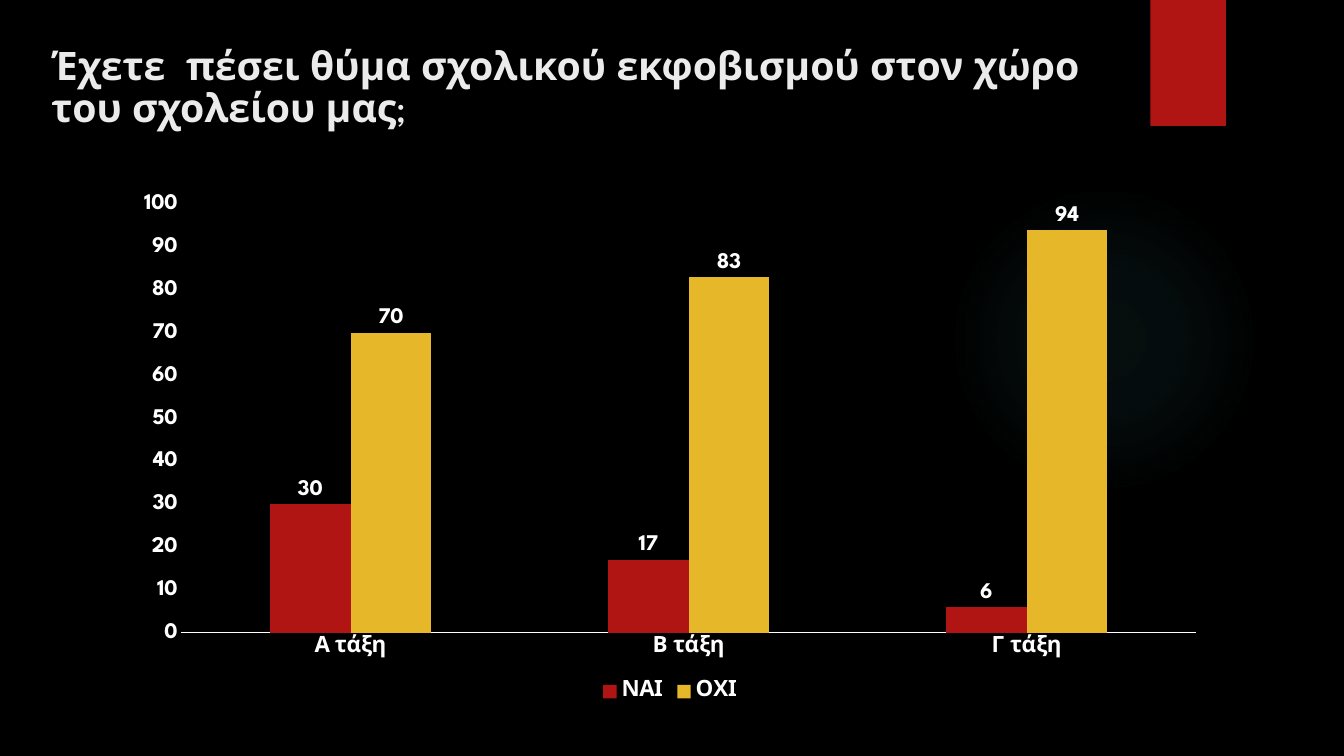
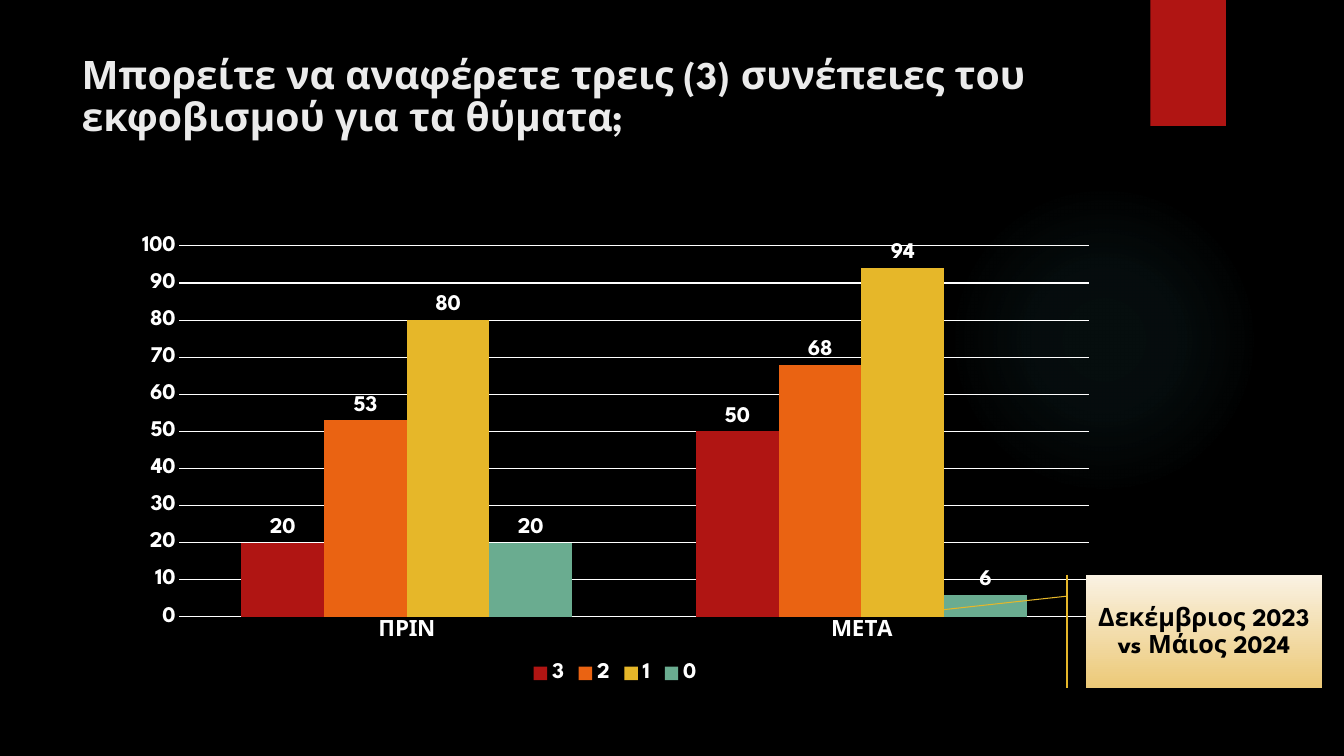
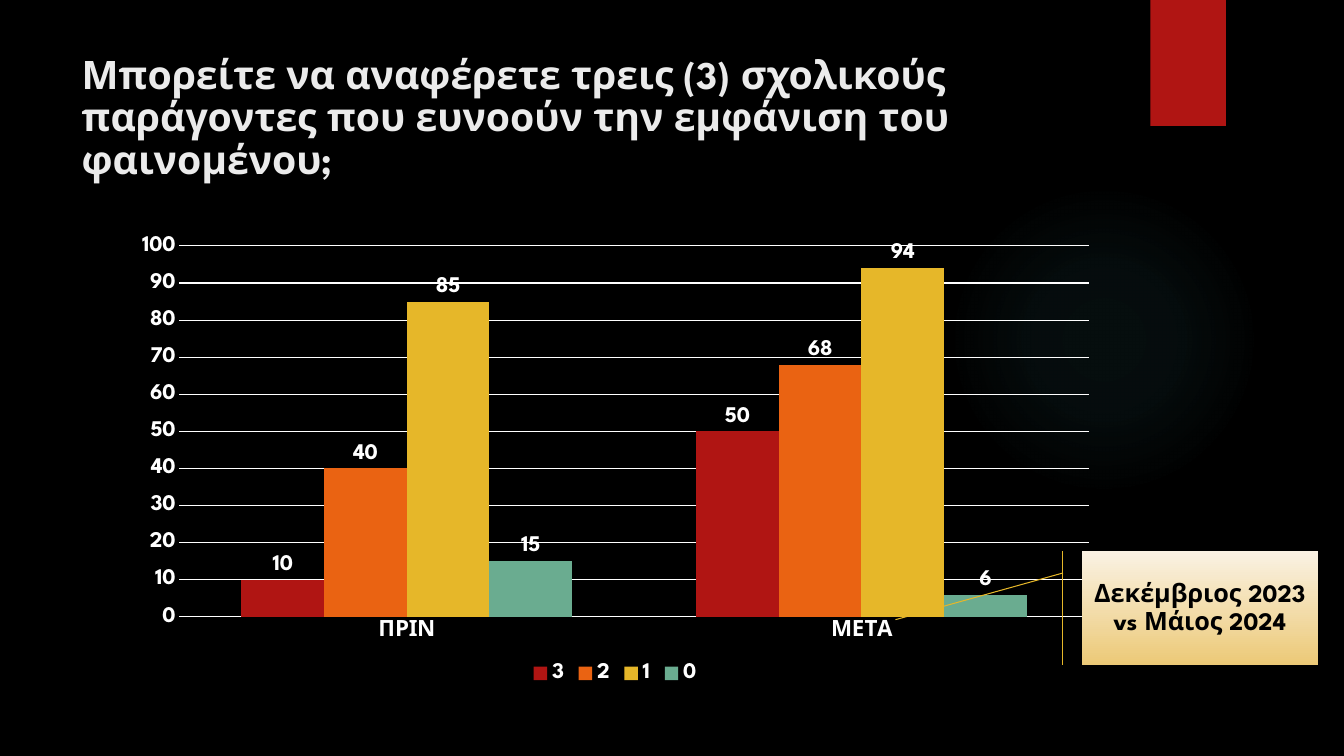
from dataclasses import dataclass

import pptx
import pptx.chart.data
import pptx.dml.color
import pptx.enum.chart
import pptx.enum.shapes
import pptx.enum.text
import pptx.oxml
import pptx.oxml.ns
import pptx.util

Inches = pptx.util.Inches
Pt = pptx.util.Pt
qn = pptx.oxml.ns.qn


@dataclass(frozen=True)
class Theme:
    font: str = "League Spartan"
    background: str = "000000"
    title: str = "EBEBEB"
    chart_text: str = "FFFFFF"
    callout_text: str = "000000"
    red: str = "B01513"
    orange: str = "EA6312"
    gold: str = "E6B729"
    green: str = "6AAC90"
    glow: str = "50B9C1"
    callout_top: str = "FAF2E3"
    callout_bottom: str = "ECC977"
    title_size: int = 28
    callout_size: int = 18
    chart_size: int = 16
    hairline: float = 0.75
    line_spacing: float = 0.9


THEME = Theme()

GLOW_BOX = (9.41, 1.83, 3.08, 3.08)
RIBBON_BOX = (11.41, 0, 0.75, 1.25)
CALLOUT_SIZE = (2.34, 1.13)
PERIODS = "Δεκέμβριος 2023 vs Μάιος 2024"

CLASS_CHART = dict(box=(1.21, 1.84, 10.87, 5.17), plot=(1.8, 2.03, 10.06, 4.25),
                   gap=219, grid=False, colors=(THEME.red, THEME.gold))
BEFORE_AFTER_CHART = dict(box=(1.21, 2.24, 9.78, 4.59), plot=(1.78, 2.44, 9.02, 3.68),
                          gap=150, grid=True,
                          colors=(THEME.red, THEME.orange, THEME.gold, THEME.green))

# Title runs are (text, bold) pairs.
SLIDES = [
    dict(title=[("Έχετε  πέσει θύμα σχολικού εκφοβισμού στον χώρο του σχολείου μας", True),
                (";", False)],
         title_box=(0.41, 0.41, 10.87, 1.53),
         chart=CLASS_CHART,
         categories=("Α τάξη", "Β τάξη", "Γ τάξη"),
         series={"ΝΑΙ": (30, 17, 6), "ΟΧΙ": (70, 83, 94)}),
    dict(title=[("Μπορείτε να αναφέρετε τρεις (3) συνέπειες του εκφοβισμού "
                 "για τα θύματα;", True)],
         title_box=(0.71, 0.5, 10.61, 1.53),
         chart=BEFORE_AFTER_CHART,
         categories=("ΠΡΙΝ", "ΜΕΤΑ"),
         series={"3": (20, 50), "2": (53, 68), "1": (80, 94), "0": (20, 6)},
         callout=dict(at=(10.77, 5.7), pointer=(0.19, -0.08, 0.36, -0.83))),
    dict(title=[("Μπορείτε να αναφέρετε τρεις (3) σχολικούς παράγοντες που ευνοούν "
                 "την εμφάνιση του φαινομένου;", True)],
         title_box=(0.71, 0.5, 10.29, 1.53),
         chart=BEFORE_AFTER_CHART,
         categories=("ΠΡΙΝ", "ΜΕΤΑ"),
         series={"3": (10, 50), "2": (40, 68), "1": (85, 94), "0": (15, 6)},
         callout=dict(at=(10.73, 5.47), pointer=(0.19, -0.08, 0.6, -0.79))),
]


def rgb(value):
    return pptx.dml.color.RGBColor.from_string(value)


def inches(box):
    return [Inches(length) for length in box]


def set_font(font, size, color, bold=True):
    font.name = THEME.font
    font.size = Pt(size)
    font.bold = bold
    font.color.rgb = rgb(color)


def write(frame, runs, size, color, align, anchor):
    frame.word_wrap = True
    frame.auto_size = pptx.enum.text.MSO_AUTO_SIZE.NONE
    frame.vertical_anchor = anchor
    paragraph = frame.paragraphs[0]
    paragraph.alignment = align
    paragraph.line_spacing = THEME.line_spacing
    for text, bold in runs:
        run = paragraph.add_run()
        run.text = text
        set_font(run.font, size, color, bold)


def fill_gradient(shape, stops, direction):
    """Fill with (position %, colour, opacity %) stops along a direction element."""
    stop_xml = "".join(
        f'<a:gs pos="{position * 1000}"><a:srgbClr val="{color}">'
        f'<a:alpha val="{opacity * 1000}"/></a:srgbClr></a:gs>'
        for position, color, opacity in stops)
    gradient = pptx.oxml.parse_xml(
        f'<a:gradFill {pptx.oxml.ns.nsdecls("a")} rotWithShape="1">'
        f'<a:gsLst>{stop_xml}</a:gsLst>{direction}</a:gradFill>')
    shape.fill.background()
    properties = shape._element.spPr
    properties.replace(properties.find(qn("a:noFill")), gradient)


def add_plain_shape(slide, kind, box):
    shape = slide.shapes.add_shape(kind, *inches(box))
    shape.shadow.inherit = False
    shape.line.fill.background()
    return shape


def decorate_layout(layout, slide):
    """Draw the shared glow and ribbon on a slide, then move them to its layout."""
    shapes = pptx.enum.shapes.MSO_SHAPE
    glow = add_plain_shape(slide, shapes.OVAL, GLOW_BOX)
    fill_gradient(
        glow,
        [(0, THEME.glow, 7), (36, THEME.glow, 6), (69, THEME.glow, 0)],
        '<a:path path="circle"><a:fillToRect l="50000" t="50000" r="50000" b="50000"/></a:path>')
    ribbon = add_plain_shape(slide, shapes.RECTANGLE, RIBBON_BOX)
    ribbon.fill.solid()
    ribbon.fill.fore_color.rgb = rgb(THEME.red)
    for offset, shape in enumerate((glow, ribbon)):
        shape._element.nvSpPr.cNvPr.set("id", str(100 + offset))
        layout.shapes.element.insert(2 + offset, shape._element)


def place_plot(chart, box, plot):
    """Fix the inner plot area, given in slide inches, inside the chart."""
    left, top, width, height = box
    fractions = dict(x=(plot[0] - left) / width, y=(plot[1] - top) / height,
                     w=plot[2] / width, h=plot[3] / height)
    values = "".join(f'<c:{key} val="{value:.4f}"/>' for key, value in fractions.items())
    layout = pptx.oxml.parse_xml(
        f'<c:layout {pptx.oxml.ns.nsdecls("c")}><c:manualLayout>'
        '<c:layoutTarget val="inner"/><c:xMode val="edge"/><c:yMode val="edge"/>'
        f'{values}</c:manualLayout></c:layout>')
    area = chart._chartSpace.chart.plotArea
    for old in area.findall(qn("c:layout")):
        area.remove(old)
    area.insert(0, layout)


def add_column_chart(slide, categories, series, box, plot, gap, grid, colors):
    enums = pptx.enum.chart
    data = pptx.chart.data.CategoryChartData()
    data.categories = categories
    for name, values in series.items():
        data.add_series(name, values)
    chart = slide.shapes.add_chart(
        enums.XL_CHART_TYPE.COLUMN_CLUSTERED, *inches(box), data).chart
    chart.has_title = False
    set_font(chart.font, THEME.chart_size, THEME.chart_text)
    chart.has_legend = True
    chart.legend.position = enums.XL_LEGEND_POSITION.BOTTOM
    chart.legend.include_in_layout = False
    set_font(chart.legend.font, THEME.chart_size, THEME.chart_text)

    for axis in (chart.category_axis, chart.value_axis):
        axis.major_tick_mark = axis.minor_tick_mark = enums.XL_TICK_MARK.NONE
        axis.format.line.fill.background()
        set_font(axis.tick_labels.font, THEME.chart_size, THEME.chart_text)
    scale = chart.value_axis
    scale.minimum_scale, scale.maximum_scale, scale.major_unit = 0, 100, 10
    scale.has_major_gridlines = grid
    rule = scale.major_gridlines.format.line if grid else chart.category_axis.format.line
    rule.color.rgb = rgb(THEME.chart_text)
    rule.width = Pt(THEME.hairline)

    columns = chart.plots[0]
    columns.gap_width, columns.overlap = gap, 0
    columns.vary_by_categories = False
    for answer, color in zip(columns.series, colors):
        answer.format.fill.solid()
        answer.format.fill.fore_color.rgb = rgb(color)
        answer.invert_if_negative = False
        labels = answer.data_labels
        labels.show_value = True
        labels.position = enums.XL_LABEL_POSITION.OUTSIDE_END
        set_font(labels.font, THEME.chart_size, THEME.chart_text)
    place_plot(chart, box, plot)


def add_period_callout(slide, at, pointer):
    callout = add_plain_shape(
        slide, pptx.enum.shapes.MSO_SHAPE.LINE_CALLOUT_1_ACCENT_BAR, at + CALLOUT_SIZE)
    for index, value in enumerate(pointer):
        callout.adjustments[index] = value
    fill_gradient(callout, [(0, THEME.callout_top, 100), (100, THEME.callout_bottom, 100)],
                  '<a:lin ang="5400000" scaled="0"/>')
    callout.line.color.rgb = rgb(THEME.gold)
    callout.line.width = Pt(THEME.hairline)
    write(callout.text_frame, [(PERIODS, True)], THEME.callout_size, THEME.callout_text,
          align=pptx.enum.text.PP_ALIGN.CENTER, anchor=pptx.enum.text.MSO_ANCHOR.MIDDLE)


def main():
    deck = pptx.Presentation()
    deck.slide_width, deck.slide_height = Inches(13.33), Inches(7.5)
    backdrop = deck.slide_master.background.fill
    backdrop.solid()
    backdrop.fore_color.rgb = rgb(THEME.background)
    layout = deck.slide_layouts.get_by_name("Title Only")

    for number, content in enumerate(SLIDES):
        slide = deck.slides.add_slide(layout)
        if number == 0:
            decorate_layout(layout, slide)
        title = slide.shapes.title
        title.left, title.top, title.width, title.height = inches(content["title_box"])
        write(title.text_frame, content["title"], THEME.title_size, THEME.title,
              align=pptx.enum.text.PP_ALIGN.LEFT, anchor=pptx.enum.text.MSO_ANCHOR.TOP)
        add_column_chart(slide, content["categories"], content["series"], **content["chart"])
        if "callout" in content:
            add_period_callout(slide, **content["callout"])
    deck.save("out.pptx")


if __name__ == "__main__":
    main()
